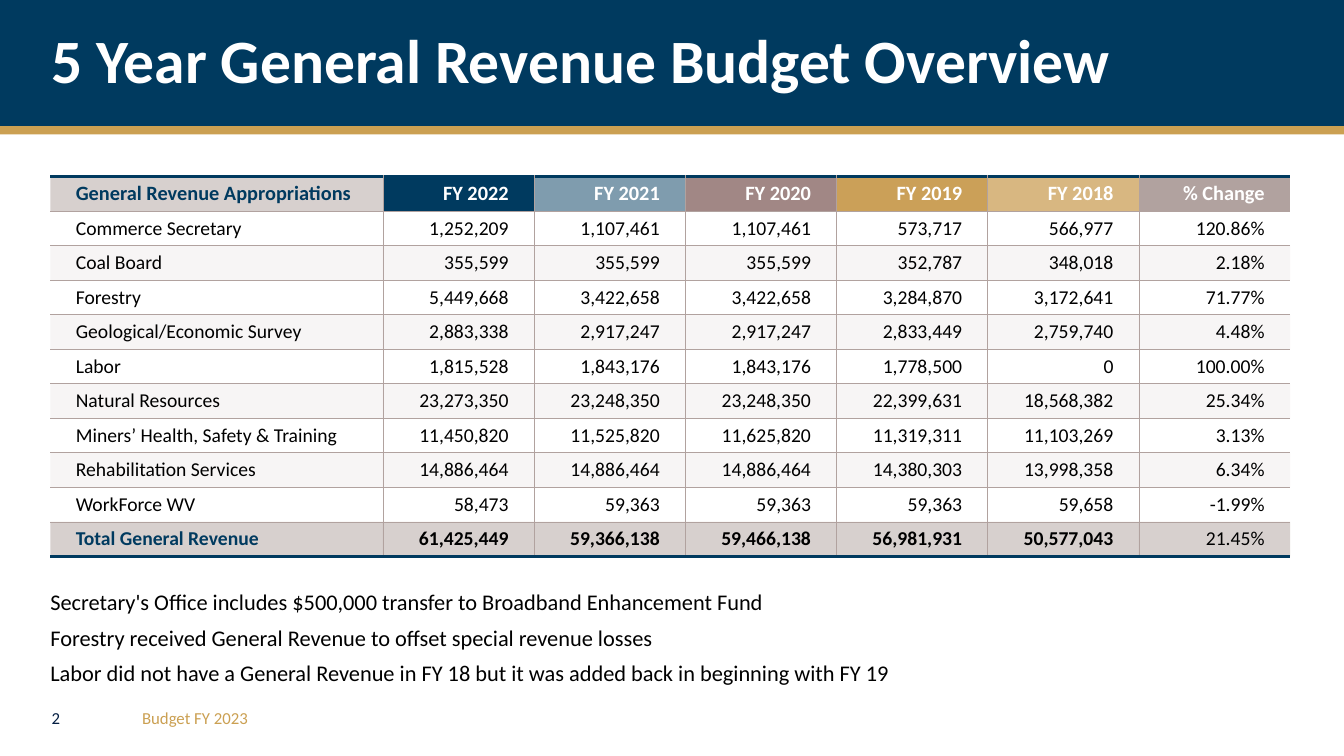
from lxml import etree
from pptx import Presentation
from pptx.dml.color import RGBColor
from pptx.enum.shapes import MSO_SHAPE
from pptx.enum.text import MSO_ANCHOR, MSO_AUTO_SIZE, PP_ALIGN
from pptx.oxml.ns import qn
from pptx.util import Cm, Pt

LEFT, RIGHT = PP_ALIGN.LEFT, PP_ALIGN.RIGHT
MIDDLE, TOP = MSO_ANCHOR.MIDDLE, MSO_ANCHOR.TOP
NO_FIT = MSO_AUTO_SIZE.NONE
RECTANGLE = MSO_SHAPE.RECTANGLE

COLORS = {
    "navy": "003A5F", "ink": "041E42", "gold": "CBA052", "ochre": "CBA058",
    "mauve": "A18785", "taupe": "B1A29F", "white": "FFFFFF", "black": "000000",
}


def write(frame, text, size=14, color="black", bold=False, align=LEFT,
          anchor=MIDDLE, after=0, line=1.0, inset_left=0, inset_right=0):
    """Fill a text frame or table cell, one paragraph per line of text."""
    frame.margin_left, frame.margin_right = Cm(inset_left), Cm(inset_right)
    frame.margin_top = frame.margin_bottom = 0
    frame.vertical_anchor = anchor
    body = getattr(frame, "text_frame", frame)
    body.word_wrap = True
    for index, content in enumerate(text.split("\n")):
        para = body.add_paragraph() if index else body.paragraphs[0]
        para.alignment = align
        para.space_before, para.space_after = Pt(0), Pt(after)
        para.line_spacing = line
        span = para.add_run()
        span.text = content
        span.font.name, span.font.size, span.font.bold = "Calibri", Pt(size), bold
        span.font.color.rgb = RGBColor.from_string(COLORS[color])


def style_cell(cell, fill, opacity, borders):
    """Set a cell's fill and its borders (left, right, top, bottom)."""
    cell.fill.solid()
    cell.fill.fore_color.rgb = RGBColor.from_string(COLORS[fill])
    properties = cell._tc.get_or_add_tcPr()
    if opacity < 100:
        tint = properties.find(".//" + qn("a:srgbClr"))
        etree.SubElement(tint, qn("a:alpha"), val=str(opacity * 1000))
    for index, (side, border) in enumerate(zip("LRTB", borders)):
        edge = etree.Element(qn("a:ln" + side))
        properties.insert(index, edge)
        if border is None:
            etree.SubElement(edge, qn("a:noFill"))
            continue
        color, width = border
        edge.set("w", str(Pt(width)))
        paint = etree.SubElement(edge, qn("a:solidFill"))
        etree.SubElement(paint, qn("a:srgbClr"), val=COLORS[color])


deck = Presentation()
deck.slide_width, deck.slide_height = Cm(33.87), Cm(19.05)
page = deck.slides.add_slide(deck.slide_layouts[1])
title, notes = page.placeholders

# Title band
title.left, title.top, title.width, title.height = 0, 0, deck.slide_width, Cm(3.18)
title.fill.solid()
title.fill.fore_color.rgb = RGBColor.from_string(COLORS["navy"])
title.text_frame.auto_size = NO_FIT
write(title.text_frame, "5 Year General Revenue Budget Overview", size=44,
      color="white", bold=True, line=0.9, inset_left=1.3, inset_right=3.18)

# Gold rule under the title
rule = page.shapes.add_shape(RECTANGLE, 0, Cm(3.18), deck.slide_width, Cm(0.21))
rule.shadow.inherit = False
rule.fill.solid()
rule.fill.fore_color.rgb = RGBColor.from_string(COLORS["gold"])
rule.line.fill.background()

# Budget table
BUDGET = [
    ("General Revenue Appropriations", "FY 2022", "FY 2021", "FY 2020", "FY 2019", "FY 2018", "% Change"),
    ("Commerce Secretary", "1,252,209", "1,107,461", "1,107,461", "573,717", "566,977", "120.86%"),
    ("Coal Board", "355,599", "355,599", "355,599", "352,787", "348,018", "2.18%"),
    ("Forestry", "5,449,668", "3,422,658", "3,422,658", "3,284,870", "3,172,641", "71.77%"),
    ("Geological/Economic Survey", "2,883,338", "2,917,247", "2,917,247", "2,833,449", "2,759,740", "4.48%"),
    ("Labor", "1,815,528", "1,843,176", "1,843,176", "1,778,500", "0", "100.00%"),
    ("Natural Resources", "23,273,350", "23,248,350", "23,248,350", "22,399,631", "18,568,382", "25.34%"),
    ("Miners’ Health, Safety & Training", "11,450,820", "11,525,820", "11,625,820", "11,319,311", "11,103,269", "3.13%"),
    ("Rehabilitation Services", "14,886,464", "14,886,464", "14,886,464", "14,380,303", "13,998,358", "6.34%"),
    ("WorkForce WV", "58,473", "59,363", "59,363", "59,363", "59,658", "-1.99%"),
    ("Total General Revenue", "61,425,449", "59,366,138", "59,466,138", "56,981,931", "50,577,043", "21.45%"),
]
HEADER_FILLS = [("taupe", 50), ("navy", 100), ("navy", 50), ("mauve", 100),
                ("ochre", 100), ("ochre", 75), ("taupe", 100)]
THIN, THICK = ("taupe", 0.5), ("navy", 2.25)
last_row, last_column = len(BUDGET) - 1, len(HEADER_FILLS) - 1

table = page.shapes.add_table(len(BUDGET), len(HEADER_FILLS), Cm(1.27), Cm(4.45),
                              Cm(31.24), Cm(9.55)).table
table.first_row = table.horz_banding = False
for index, column in enumerate(table.columns):
    column.width = Cm(3.81 if index else 8.38)

for r, record in enumerate(BUDGET):
    table.rows[r].height = Cm(0.87)
    header, total = r == 0, r == last_row
    for c, value in enumerate(record):
        if header:
            fill, opacity = HEADER_FILLS[c]
        elif total:
            fill, opacity = "taupe", 50
        else:
            fill, opacity = ("white", 100) if r % 2 else ("taupe", 10)
        if c == 0 and (header or total):
            color = "navy"
        else:
            color = "white" if header else "black"
        cell = table.cell(r, c)
        style_cell(cell, fill, opacity, (
            THIN if c else None, THIN if c < last_column else None,
            THICK if header else THIN, THICK if total else THIN))
        write(cell, value, size=14.5 if header else 14, color=color,
              bold=header or (total and c < last_column),
              align=RIGHT if c else LEFT, inset_left=0.64, inset_right=0.64)

# Notes below the table
notes.left, notes.top, notes.width, notes.height = Cm(1.27), Cm(14.83), Cm(31.24), Cm(2.49)
notes.text_frame.auto_size = NO_FIT
write(notes.text_frame,
      "Secretary's Office includes $500,000 transfer to Broadband Enhancement Fund\n"
      "Forestry received General Revenue to offset special revenue losses\n"
      "Labor did not have a General Revenue in FY 18 but it was added back in beginning with FY 19",
      size=16, anchor=TOP, after=6)
for para in notes.text_frame.paragraphs:
    properties = para._p.get_or_add_pPr()
    properties.set("marL", "0")
    properties.set("indent", "0")
    etree.SubElement(properties, qn("a:buNone"))

# Page number and footer
for text, left, width, color in [("2", 1.3, 1.8, "ink"),
                                 ("Budget FY 2023", 3.58, 13.11, "gold")]:
    box = page.shapes.add_textbox(Cm(left), Cm(17.58), Cm(width), Cm(1.02))
    write(box.text_frame, text, size=12, color=color)

deck.save("out.pptx")
